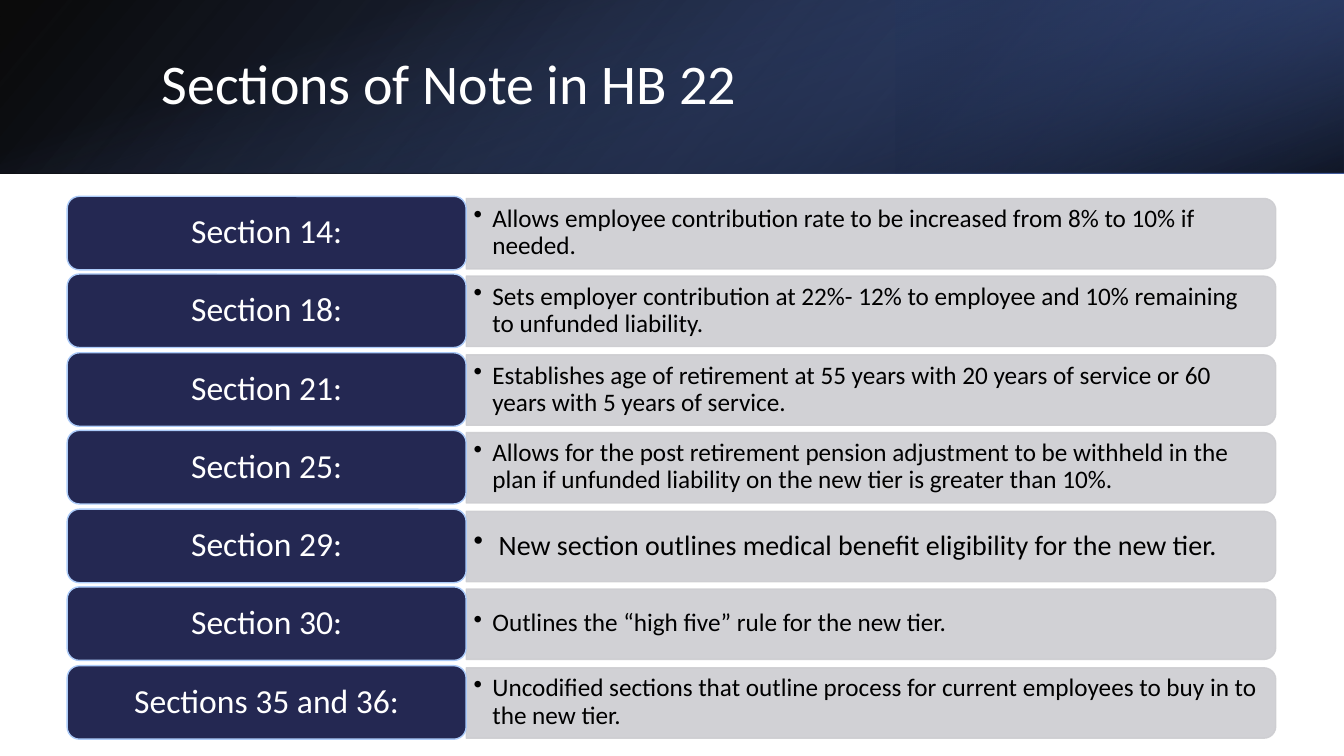
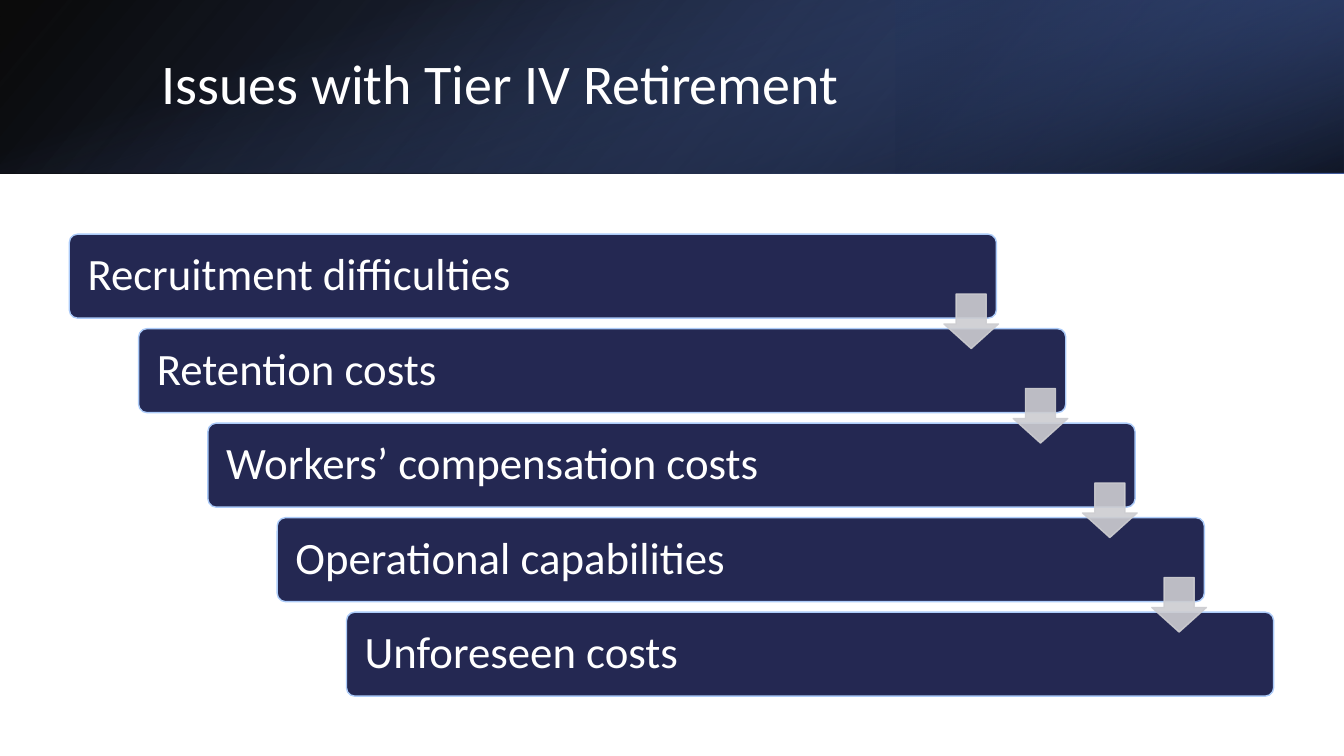
from lxml.etree import SubElement
from pptx import Presentation
from pptx.dml.color import RGBColor
from pptx.enum.shapes import MSO_SHAPE
from pptx.enum.text import MSO_ANCHOR, PP_ALIGN
from pptx.oxml.ns import qn
from pptx.util import Pt

PX = 9525
RECT = MSO_SHAPE.RECTANGLE
ROUND = MSO_SHAPE.ROUNDED_RECTANGLE
TAB = MSO_SHAPE.ROUND_2_SAME_RECTANGLE
ARROW = MSO_SHAPE.DOWN_ARROW
MIDDLE = MSO_ANCHOR.MIDDLE
LEFT, CENTER = PP_ALIGN.LEFT, PP_ALIGN.CENTER

BLACK = RGBColor(0x00, 0x00, 0x00)
WHITE = RGBColor(0xFF, 0xFF, 0xFF)
NAVY = RGBColor(0x24, 0x28, 0x52)
SKY = RGBColor(0xAC, 0xCB, 0xF9)
GREY = RGBColor(0xCD, 0xCD, 0xD1)
STEEL = RGBColor(0x38, 0x4C, 0x81)
DUSK = RGBColor(0x25, 0x33, 0x56)
BLUE = RGBColor(0x4A, 0x66, 0xAC)

WIDE, HIGH, BAND = 1280, 720, 165


def draw(slide, kind, box, fill=None, line=None, alpha=100):
    shape = slide.shapes.add_shape(kind, *[n * PX for n in box])
    shape.shadow.inherit = False
    if fill is not None:
        shape.fill.solid()
        shape.fill.fore_color.rgb = fill
    if line is None:
        shape.line.fill.background()
    else:
        shape.line.color.rgb = line
        shape.line.width = Pt(1)
    if alpha < 100:
        for tint in list(shape._element.iter(qn("a:srgbClr"))):
            SubElement(tint, qn("a:alpha"), val=str(alpha * 1000))
    return shape


def write(shape, text, size, color, align=LEFT, pad=(10, 5)):
    frame = shape.text_frame
    frame.word_wrap = True
    frame.vertical_anchor = MIDDLE
    frame.margin_left = frame.margin_right = pad[0] * PX
    frame.margin_top = frame.margin_bottom = pad[1] * PX
    para = frame.paragraphs[0]
    para.text = text
    para.alignment = align
    para.line_spacing = 0.9
    para.font.name = "Calibri"
    para.font.size = Pt(size)
    para.font.color.rgb = color
    return para


deck = Presentation()
deck.slide_width, deck.slide_height = WIDE * PX, HIGH * PX

layers = [
    ((0, 0, WIDE, BAND), 0, True, 140,
     [(0, BLACK, 96), (100, STEEL, 100)]),
    ((853, 0, 427, BAND), 180, True, 320,
     [(19, DUSK, 68), (100, BLUE, 79)]),
    (((WIDE - BAND) // 2, (BAND - WIDE) // 2, BAND, WIDE), 90, False, 340,
     [(23, BLUE, 0), (99, BLACK, 74)]),
]
titles = ["Sections of Note in HB 22", "Issues with Tier IV Retirement"]
slides = []
for title in titles:
    slide = deck.slides.add_slide(deck.slide_layouts[6])
    for box, turn, flip, angle, stops in layers:
        band = draw(slide, RECT, box)
        band.rotation = turn
        if flip:
            band._element.spPr.find(qn("a:xfrm")).set("flipH", "1")
        band.fill.gradient()
        band.fill.gradient_angle = 360 - angle
        for stop, (place, color, alpha) in zip(band.fill.gradient_stops, stops):
            stop.position = place / 100
            stop.color.rgb = color
        tints = list(band._element.iter(qn("a:srgbClr")))
        for tint, (place, color, alpha) in zip(tints, stops):
            SubElement(tint, qn("a:alpha"), val=str(alpha * 1000))
    head = slide.shapes.add_textbox(144 * PX, 36 * PX, 1054 * PX, 92 * PX)
    write(head, title, 40, WHITE)
    slides.append(slide)

notes, issues = slides

rows = [
    ("Section 14:", 18, "Allows employee contribution rate to be increased "
     "from 8% to 10% if needed."),
    ("Section 18:", 18, "Sets employer contribution at 22%- 12% to employee "
     "and 10% remaining to unfunded liability."),
    ("Section 21:", 18, "Establishes age of retirement at 55 years with 20 "
     "years of service or 60 years with 5 years of service."),
    ("Section 25:", 18, "Allows for the post retirement pension adjustment to "
     "be withheld in the plan if unfunded liability on the new tier is "
     "greater than 10%."),
    ("Section 29:", 20, "New section outlines medical benefit eligibility for "
     "the new tier."),
    ("Section 30:", 18, "Outlines the “high five” rule for the new tier."),
    ("Sections 35 and 36:", 18, "Uncodified sections that outline process for "
     "current employees to buy in to the new tier."),
]
edge, long, tall = 444, 771, 67
for i, (label, size, text) in enumerate(rows):
    top = 187 + i * 447 // 6
    box = (edge + (long - tall) // 2, top + 2 - (long - tall) // 2, tall, long)
    bar = draw(notes, TAB, box, GREY, GREY, 90)
    bar.rotation = 90
    body = notes.shapes.add_textbox(edge * PX, (top + 5) * PX, 768 * PX, 60 * PX)
    para = write(body, text, size, BLACK, pad=(7, 4))
    hang = (18 if size == 18 else 24) * PX
    props = para._p.get_or_add_pPr()
    props.set("marL", str(hang))
    props.set("indent", str(-hang))
    SubElement(props, qn("a:buChar"), char="•")
    tag = draw(notes, ROUND, (64, top, 380, 70), NAVY, SKY)
    write(tag, label, 24, WHITE, CENTER)

steps = ["Recruitment difficulties", "Retention costs",
         "Workers’ compensation costs", "Operational capabilities",
         "Unforeseen costs"]
spots = [(66 + 66 * i, 223 + 90 * i) for i in range(len(steps))]
for text, (left, top) in zip(steps, spots):
    step = draw(issues, ROUND, (left, top, 883, 80), NAVY, SKY)
    step.adjustments[0] = 0.1
    write(step, text, 32, WHITE, pad=(15, 12))
for left, top in spots[:-1]:
    arrow = draw(issues, ARROW, (left + 833, top + 57, 52, 52), GREY, GREY, 90)
    arrow.adjustments[0] = 0.55
    arrow.adjustments[1] = 0.45

deck.save("out.pptx")
